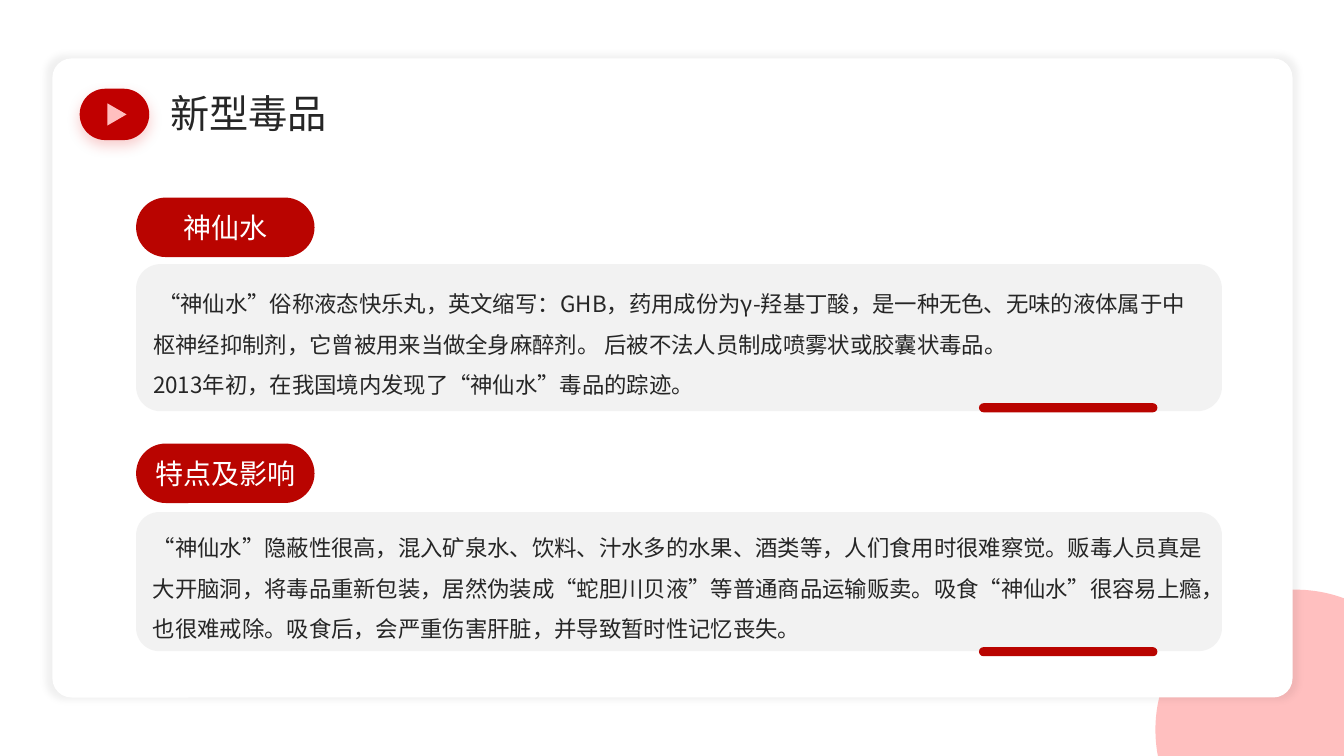
from math import acos, asin, cos, pi, sin

from lxml.etree import SubElement
from pptx import Presentation
from pptx.dml.color import RGBColor
from pptx.enum.shapes import MSO_SHAPE
from pptx.enum.text import MSO_ANCHOR, MSO_AUTO_SIZE, PP_ALIGN
from pptx.oxml.ns import qn
from pptx.util import Inches, Pt

FONT = "Noto Sans CJK SC"
INK = RGBColor(0x26, 0x26, 0x26)
WHITE = RGBColor(0xFF, 0xFF, 0xFF)
PANEL_GREY = RGBColor(0xF2, 0xF2, 0xF2)
RED = RGBColor(0xB9, 0x04, 0x00)
BADGE_RED = RGBColor(0xC0, 0x00, 0x00)
GLOW_RED = RGBColor(0xDE, 0x00, 0x00)
PINK = RGBColor(0xFF, 0xBF, 0xBF)
BLACK = RGBColor(0x00, 0x00, 0x00)

SLIDE_WIDTH, SLIDE_HEIGHT = 13.33, 7.5
SECTION_LEFT = 1.35

SECTIONS = [
    ("神仙水", 1.96, 2.62, 1.46, 4.0, [
        " “神仙水”俗称液态快乐丸，英文缩写：GHB，药用成份为γ-羟基丁酸，是一种无色、无味的液体属于"
        "中枢神经抑制剂，它曾被用来当做全身麻醉剂。 后被不法人员制成喷雾状或胶囊状毒品。",
        "2013年初，在我国境内发现了“神仙水”毒品的踪迹。",
    ]),
    ("特点及影响", 4.4, 5.08, 1.38, 6.42, [
        "“神仙水”隐蔽性很高，混入矿泉水、饮料、汁水多的水果、酒类等，人们食用时很难察觉。"
        "贩毒人员真是大开脑洞，将毒品重新包装，居然伪装成“蛇胆川贝液”等普通商品运输贩卖。"
        "吸食“神仙水”很容易上瘾，也很难戒除。吸食后，会严重伤害肝脏，并导致暂时性记忆丧失。",
    ]),
]


def paint(shape, color):
    shape.shadow.inherit = False
    shape.fill.solid()
    shape.fill.fore_color.rgb = color
    shape.line.fill.background()


def add_block(shapes, kind, box, color, rounding=None):
    block = shapes.add_shape(kind, *map(Inches, box))
    paint(block, color)
    if rounding is not None:
        block.adjustments[0] = rounding
    return block


def cast_shadow(shape, color, opacity, blur, distance=0, angle=0, scale=100):
    effects = shape._element.spPr.find(qn("a:effectLst"))
    shadow = SubElement(
        effects, qn("a:outerShdw"), blurRad=str(Pt(blur)), dist=str(Pt(distance)),
        dir=str(angle * 60000), sx=str(scale * 1000), sy=str(scale * 1000),
        algn="ctr", rotWithShape="0")
    tint = SubElement(shadow, qn("a:srgbClr"), val=str(color))
    SubElement(tint, qn("a:alpha"), val=str(opacity * 1000))


def write(frame, texts, size, color, align=PP_ALIGN.LEFT, spacing=None):
    for index, text in enumerate(texts):
        paragraph = frame.add_paragraph() if index else frame.paragraphs[0]
        paragraph.text = text
        paragraph.alignment = align
        paragraph.line_spacing = spacing
        font = paragraph.font
        font.size = Pt(size)
        font.color.rgb = color
        font.name = FONT
        SubElement(font._element, qn("a:ea"), typeface=FONT)


def add_corner_circle(shapes):
    center_x, center_y, radius, steps = 12.85, 7.24, 1.39, 60
    start = -acos((SLIDE_WIDTH - center_x) / radius)
    end = -pi - asin((SLIDE_HEIGHT - center_y) / radius)
    angles = [start + (end - start) * step / steps for step in range(steps + 1)]
    arc = [(Inches(center_x + radius * cos(angle)), Inches(center_y + radius * sin(angle)))
           for angle in angles]
    builder = shapes.build_freeform(Inches(SLIDE_WIDTH), Inches(SLIDE_HEIGHT))
    builder.add_line_segments(arc, close=True)
    paint(builder.convert_to_shape(), PINK)


def add_play_badge(shapes):
    badge = shapes.add_group_shape().shapes
    button = add_block(badge, MSO_SHAPE.ROUNDED_RECTANGLE, (0.79, 0.88, 0.69, 0.51), BADGE_RED, 0.5)
    cast_shadow(button, GLOW_RED, 20, 10, 4, 90)
    arrow = add_block(badge, MSO_SHAPE.ISOSCELES_TRIANGLE, (1.05, 1.04, 0.22, 0.19), PINK)
    arrow.rotation = 90


def place_title(slide, text):
    title = slide.shapes.title
    title.left, title.top, title.width, title.height = map(Inches, (1.59, 0.84, 1.77, 0.57))
    slide.shapes._spTree.append(title._element)
    frame = title.text_frame
    frame.word_wrap = False
    frame.auto_size = MSO_AUTO_SIZE.SHAPE_TO_FIT_TEXT
    frame.vertical_anchor = MSO_ANCHOR.TOP
    write(frame, [text], 28, INK)


def add_section(shapes, heading, heading_top, panel_top, panel_height, bar_top, texts):
    body = shapes.add_group_shape().shapes
    panel = add_block(body, MSO_SHAPE.ROUNDED_RECTANGLE,
                      (SECTION_LEFT, panel_top, 10.77, panel_height), PANEL_GREY)
    panel.text_frame.word_wrap = True
    panel.text_frame.vertical_anchor = MSO_ANCHOR.MIDDLE
    write(panel.text_frame, texts, 16, INK, spacing=1.5)
    add_block(body, MSO_SHAPE.ROUNDED_RECTANGLE, (9.71, bar_top, 1.77, 0.09), RED, 0.5)
    pill = add_block(shapes, MSO_SHAPE.ROUNDED_RECTANGLE,
                     (SECTION_LEFT, heading_top, 1.77, 0.59), RED, 0.5)
    pill.text_frame.vertical_anchor = MSO_ANCHOR.MIDDLE
    write(pill.text_frame, [heading], 20, WHITE, PP_ALIGN.CENTER)


def main():
    deck = Presentation()
    deck.slide_width, deck.slide_height = Inches(SLIDE_WIDTH), Inches(SLIDE_HEIGHT)
    slide = deck.slides.add_slide(deck.slide_layouts[5])
    shapes = slide.shapes
    add_corner_circle(shapes)
    card = add_block(shapes, MSO_SHAPE.ROUNDED_RECTANGLE, (0.52, 0.58, 12.3, 6.34), WHITE, 0.03)
    cast_shadow(card, BLACK, 5, 5, scale=101)
    add_play_badge(shapes)
    place_title(slide, "新型毒品")
    for section in SECTIONS:
        add_section(shapes, *section)
    deck.save("out.pptx")


if __name__ == "__main__":
    main()
